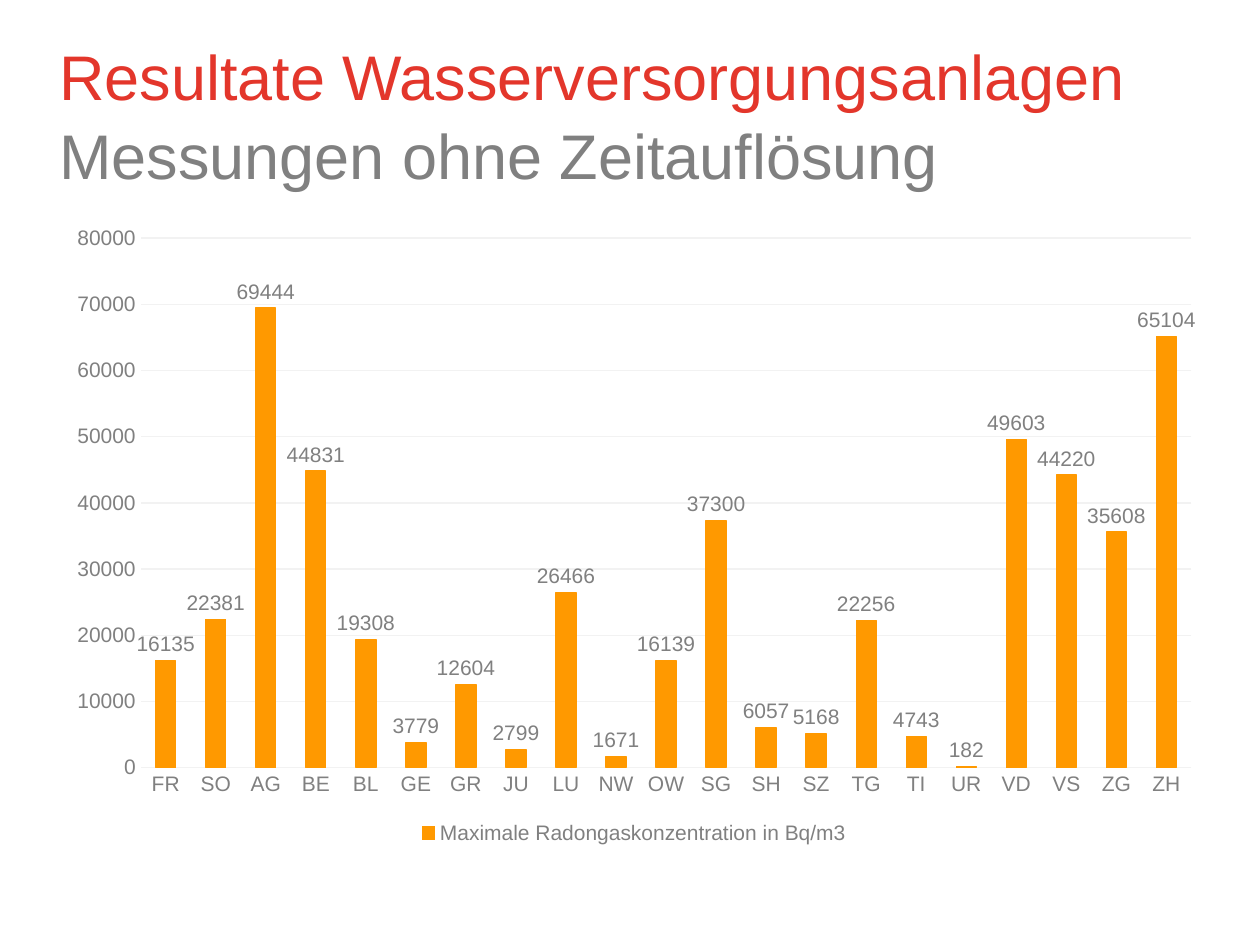
from pptx import Presentation
from pptx import util as u
from pptx.chart.data import CategoryChartData
from pptx.dml.color import RGBColor
from pptx.enum import chart as charts, text

RED = RGBColor(0xE3, 0x36, 0x2B)
GRAY = RGBColor(0x80, 0x80, 0x80)
ORANGE = RGBColor(0xFF, 0x99, 0x00)
GRID = RGBColor(0xF2, 0xF2, 0xF2)
FONT = "Arial"
WIDTH, HEIGHT = u.Inches(10), u.Inches(7.5)
LEFT, CONTENT_WIDTH = u.Inches(0.43), u.Inches(9.21)
SERIES_NAME = "Maximale Radongaskonzentration in Bq/m3"
RADON = {
    "FR": 16135, "SO": 22381, "AG": 69444, "BE": 44831, "BL": 19308,
    "GE": 3779, "GR": 12604, "JU": 2799, "LU": 26466, "NW": 1671,
    "OW": 16139, "SG": 37300, "SH": 6057, "SZ": 5168, "TG": 22256,
    "TI": 4743, "UR": 182, "VD": 49603, "VS": 44220, "ZG": 35608,
    "ZH": 65104,
}


def style_font(font, size, color):
    """Apply the slide's typeface with a size and colour."""
    font.name, font.size, font.bold = FONT, u.Pt(size), False
    font.color.rgb = color


def add_title(slide, lines):
    """Add the title as one paragraph with a coloured run per line."""
    shape = slide.shapes.add_textbox(LEFT, u.Inches(0.16), CONTENT_WIDTH, u.Inches(1.39))
    frame = shape.text_frame
    frame.word_wrap = True
    frame.vertical_anchor = text.MSO_ANCHOR.MIDDLE
    frame.margin_left, frame.margin_top = u.Inches(0.04), u.Inches(0.08)
    frame.margin_right = frame.margin_bottom = 0
    paragraph = frame.paragraphs[0]
    paragraph.line_spacing = 1.05
    for index, (line, color) in enumerate(lines):
        if index:
            paragraph.add_line_break()
        run = paragraph.add_run()
        run.text = line
        style_font(run.font, 36, color)


def style_axis(axis):
    """Give an axis gray labels without a line or tick marks."""
    axis.major_tick_mark = axis.minor_tick_mark = charts.XL_TICK_MARK.NONE
    axis.format.line.fill.background()
    style_font(axis.tick_labels.font, 12, GRAY)


def style_series(plot):
    """Colour the columns and put their values above them."""
    plot.gap_width = 150
    plot.vary_by_categories = False
    series = plot.series[0]
    series.format.fill.solid()
    series.format.fill.fore_color.rgb = ORANGE
    series.format.line.color.rgb = ORANGE
    series.format.line.width = u.Pt(0.75)
    labels = series.data_labels
    labels.show_value = True
    labels.position = charts.XL_LABEL_POSITION.OUTSIDE_END
    labels.number_format, labels.number_format_is_linked = "0", False
    style_font(labels.font, 12, GRAY)


def add_radon_chart(slide):
    """Add the column chart of radon maxima by canton."""
    data = CategoryChartData(number_format="0")
    data.categories = list(RADON)
    data.add_series(SERIES_NAME, list(RADON.values()))
    chart = slide.shapes.add_chart(
        charts.XL_CHART_TYPE.COLUMN_CLUSTERED,
        LEFT, u.Inches(1.7), CONTENT_WIDTH, u.Inches(5.04), data,
    ).chart
    chart.has_title = False
    style_font(chart.font, 12, GRAY)
    style_axis(chart.category_axis)
    values = chart.value_axis
    style_axis(values)
    values.minimum_scale, values.maximum_scale, values.major_unit = 0, 80000, 10000
    values.tick_labels.number_format = "0"
    values.tick_labels.number_format_is_linked = False
    values.has_major_gridlines = True
    values.major_gridlines.format.line.color.rgb = GRID
    values.major_gridlines.format.line.width = u.Pt(0.75)
    style_series(chart.plots[0])
    chart.has_legend = True
    chart.legend.position = charts.XL_LEGEND_POSITION.BOTTOM
    chart.legend.include_in_layout = False
    style_font(chart.legend.font, 12, GRAY)


def main():
    """Build and save the slide."""
    presentation = Presentation()
    presentation.slide_width, presentation.slide_height = WIDTH, HEIGHT
    slide = presentation.slides.add_slide(presentation.slide_layouts[6])
    add_title(slide, [
        ("Resultate Wasserversorgungsanlagen", RED),
        ("Messungen ohne Zeitauflösung", GRAY),
    ])
    add_radon_chart(slide)
    presentation.save("out.pptx")


if __name__ == "__main__":
    main()
